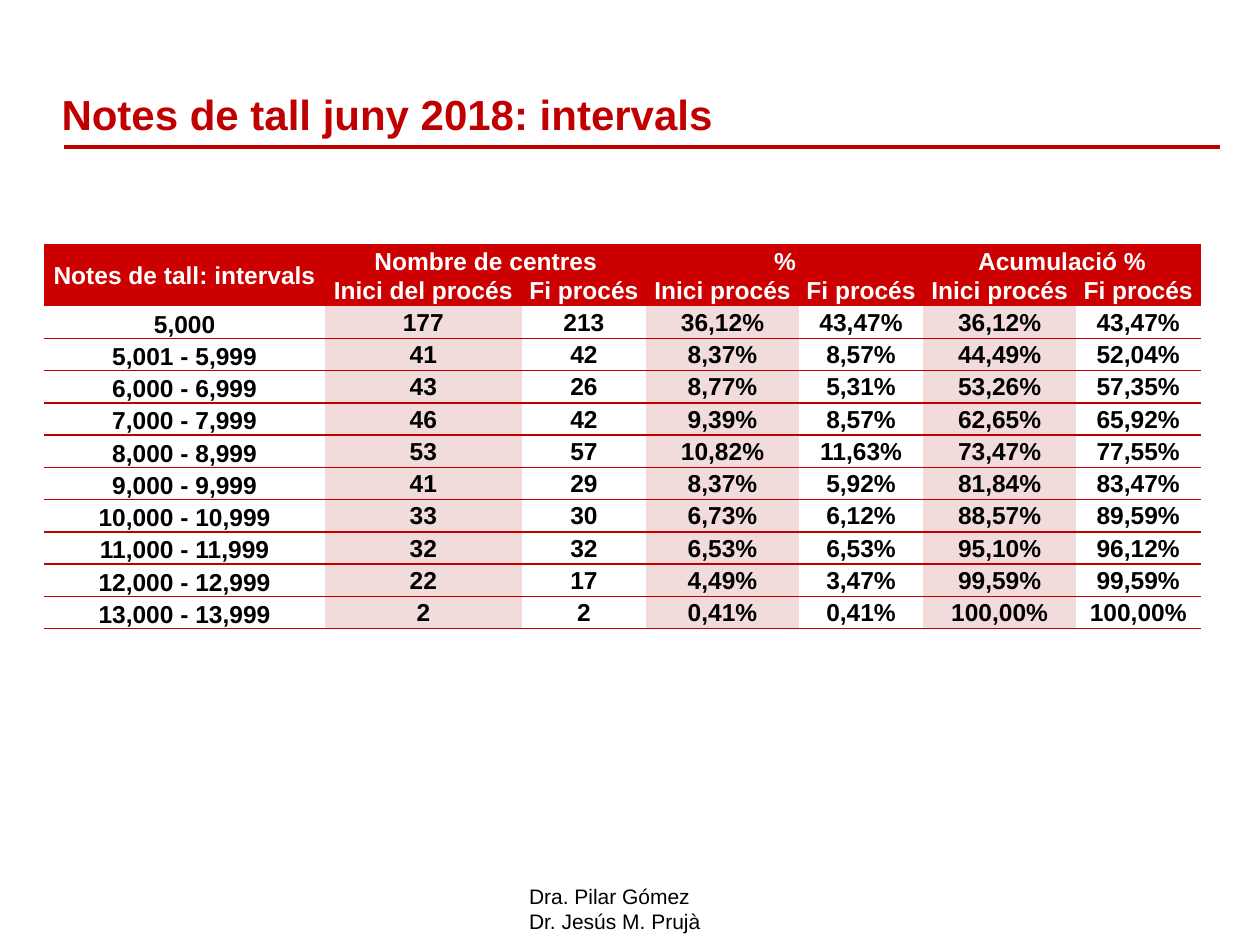
from dataclasses import dataclass
from typing import NamedTuple

from lxml.etree import SubElement
from pptx import Presentation
from pptx.dml.color import RGBColor
from pptx.enum.shapes import MSO_CONNECTOR
from pptx.enum.text import MSO_ANCHOR, PP_ALIGN
from pptx.oxml import parse_xml
from pptx.oxml.ns import nsdecls, qn
from pptx.util import Emu, Inches, Pt


@dataclass(frozen=True)
class Theme:
    font: str = "Arial"
    accent: str = "C00000"
    header: str = "CC0000"
    band: str = "F2DCDB"
    light: str = "FFFFFF"
    dark: str = "000000"
    title: int = 24
    table: int = 14
    footer: int = 12
    rule: float = 2.25
    border: int = 1


class Box(NamedTuple):
    """Place on a grid of 10 columns by 7.5 rows."""
    col: float
    row: float
    cols: float
    rows: float


class Interval(NamedTuple):
    marks: str
    start: str
    end: str
    start_pct: str
    end_pct: str
    start_sum: str
    end_sum: str


THEME = Theme()
GRID_COLS, GRID_ROWS = 10, 7.5
UNIT = Inches(10) / GRID_COLS
NO_STYLE = "{2D5ABB26-0587-4C30-8999-92F81FD0307C}"

TABLE = Box(0.35, 1.94, 9.18, 3.05)
COLUMNS = (2.23, 1.56) + (0.99, 1.21) * 2 + (0.99,)
HEADER_ROWS, HEADER_HEIGHT = 2, 0.49
GROUPS = ("Nombre de centres", "%", "Acumulació %")
SUBHEADS = ("Inici del procés", "Fi procés") + ("Inici procés", "Fi procés") * 2
INTERVALS = (
    Interval("5,000", "177", "213", "36,12%", "43,47%", "36,12%", "43,47%"),
    Interval("5,001 - 5,999", "41", "42", "8,37%", "8,57%", "44,49%", "52,04%"),
    Interval("6,000 - 6,999", "43", "26", "8,77%", "5,31%", "53,26%", "57,35%"),
    Interval("7,000 - 7,999", "46", "42", "9,39%", "8,57%", "62,65%", "65,92%"),
    Interval("8,000 - 8,999", "53", "57", "10,82%", "11,63%", "73,47%", "77,55%"),
    Interval("9,000 - 9,999", "41", "29", "8,37%", "5,92%", "81,84%", "83,47%"),
    Interval("10,000 - 10,999", "33", "30", "6,73%", "6,12%", "88,57%", "89,59%"),
    Interval("11,000 - 11,999", "32", "32", "6,53%", "6,53%", "95,10%", "96,12%"),
    Interval("12,000 - 12,999", "22", "17", "4,49%", "3,47%", "99,59%", "99,59%"),
    Interval("13,000 - 13,999", "2", "2", "0,41%", "0,41%", "100,00%", "100,00%"),
)


def grid(n: float) -> Emu:
    return Emu(round(n * UNIT))


def style(p, size: int, color: str, bold: bool = False) -> None:
    p.font.name, p.font.size, p.font.bold = THEME.font, Pt(size), bold
    p.font.color.rgb = RGBColor.from_string(color)


def add_text(slide, box: Box, lines: tuple[str, ...], size: int, color: str,
             bold: bool = False, wrap: bool = True) -> None:
    tf = slide.shapes.add_textbox(*map(grid, box)).text_frame
    tf.word_wrap = wrap
    tf.vertical_anchor = MSO_ANCHOR.MIDDLE if wrap else MSO_ANCHOR.TOP
    tf.text = "\n".join(lines)
    for p in tf.paragraphs:
        style(p, size, color, bold)


def add_rule(slide, left: float, right: float, row: float) -> None:
    line = slide.shapes.add_connector(
        MSO_CONNECTOR.STRAIGHT, grid(left), grid(row), grid(right), grid(row))
    line.line.color.rgb = RGBColor.from_string(THEME.accent)
    line.line.width = Pt(THEME.rule)
    SubElement(line._element.spPr, qn("a:effectLst"))


def fill_cell(cell, text: str, color: str, fill: str | None, anchor: MSO_ANCHOR) -> None:
    cell.margin_left = cell.margin_right = cell.margin_top = Inches(0.01)
    cell.margin_bottom = 0
    cell.vertical_anchor = anchor
    if fill:
        cell.fill.solid()
        cell.fill.fore_color.rgb = RGBColor.from_string(fill)
    else:
        cell.fill.background()
    cell.text = text
    p = cell.text_frame.paragraphs[0]
    p.alignment = PP_ALIGN.CENTER
    style(p, THEME.table, color, True)


def underline_cell(cell) -> None:
    cell._tc.get_or_add_tcPr().insert(0, parse_xml(
        f'<a:lnB {nsdecls("a")} w="{Pt(THEME.border)}"><a:solidFill>'
        f'<a:srgbClr val="{THEME.accent}"/></a:solidFill></a:lnB>'))


def add_intervals_table(slide) -> None:
    row_count = HEADER_ROWS + len(INTERVALS)
    table = slide.shapes.add_table(row_count, len(COLUMNS), *map(grid, TABLE)).table
    table.first_row = table.horz_banding = False
    table._tbl.tblPr.find(qn("a:tableStyleId")).text = NO_STYLE
    for column, width in zip(table.columns, COLUMNS):
        column.width = grid(width)
    body_height = (TABLE.rows - HEADER_HEIGHT) / len(INTERVALS)
    for i, row in enumerate(table.rows):
        row.height = grid(HEADER_HEIGHT / HEADER_ROWS if i < HEADER_ROWS else body_height)

    # Header: group names span two columns, the first cell spans two rows
    top = ["Notes de tall: intervals"]
    for name in GROUPS:
        top += [name, ""]
    for r, names in enumerate((top, ("",) + SUBHEADS)):
        for c, name in enumerate(names):
            anchor = MSO_ANCHOR.BOTTOM if r == 0 and c else MSO_ANCHOR.MIDDLE
            fill_cell(table.cell(r, c), name, THEME.light, THEME.header, anchor)
    table.cell(0, 0).merge(table.cell(1, 0))
    for c in range(1, len(COLUMNS), 2):
        table.cell(0, c).merge(table.cell(0, c + 1))

    # Body: the start-of-process columns are tinted
    for r, interval in enumerate(INTERVALS, HEADER_ROWS):
        for c, value in enumerate(interval):
            cell = table.cell(r, c)
            fill_cell(cell, value, THEME.dark, THEME.band if c % 2 else None,
                      MSO_ANCHOR.MIDDLE if c else MSO_ANCHOR.BOTTOM)
            underline_cell(cell)


def main() -> None:
    prs = Presentation()
    prs.slide_width, prs.slide_height = grid(GRID_COLS), grid(GRID_ROWS)
    slide = prs.slides.add_slide(prs.slide_layouts[6])

    # Rule and authors
    add_rule(slide, 0.51, 9.68, 1.17)
    add_text(slide, Box(4.1, 6.96, 1.58, 0.5), ("Dra. Pilar Gómez", "Dr. Jesús M. Prujà"),
             THEME.footer, THEME.dark, wrap=False)

    # Title and table
    add_text(slide, Box(0.39, 0.63, 9.37, 0.55), ("Notes de tall juny 2018: intervals",),
             THEME.title, THEME.accent, bold=True)
    add_intervals_table(slide)

    prs.save("out.pptx")


if __name__ == "__main__":
    main()
